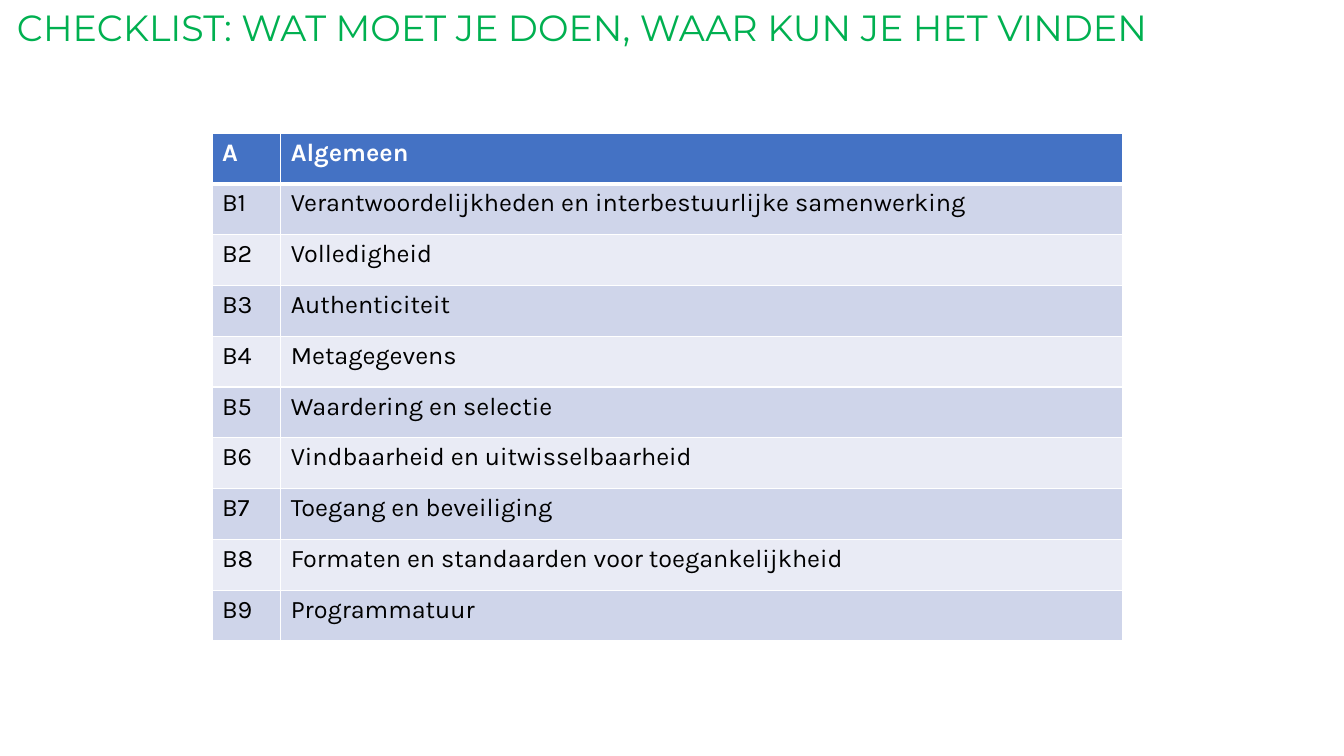
from typing import Any, NamedTuple

from lxml import etree
from pptx import Presentation
from pptx import util as u
from pptx.dml.color import RGBColor
from pptx.enum import text
from pptx.oxml import ns

GREEN = RGBColor(0x00, 0xB0, 0x50)
BLUE = RGBColor(0x44, 0x72, 0xC4)
BAND_DARK = RGBColor(0xCF, 0xD5, 0xEA)
BAND_LIGHT = RGBColor(0xE9, 0xEB, 0xF5)
WHITE = RGBColor(0xFF, 0xFF, 0xFF)
BLACK = RGBColor(0x00, 0x00, 0x00)

TITLE = "CHECKLIST: WAT MOET JE DOEN, WAAR KUN JE HET VINDEN"
ROW_HEIGHT = 36.3
COLUMN_WIDTHS = (49.1, 601.5)

TITLE_FORMAT = {"name": "Montserrat", "size": u.Pt(26)}
CELL_FORMAT = {"name": "Karla", "size": u.Pt(18)}


class ChecklistRow(NamedTuple):
    code: str
    subject: str


HEADER = ChecklistRow("A", "Algemeen")
SUBJECTS = (
    "Verantwoordelijkheden en interbestuurlijke samenwerking",
    "Volledigheid",
    "Authenticiteit",
    "Metagegevens",
    "Waardering en selectie",
    "Vindbaarheid en uitwisselbaarheid",
    "Toegang en beveiliging",
    "Formaten en standaarden voor toegankelijkheid",
    "Programmatuur",
)
ROWS = [HEADER] + [
    ChecklistRow(f"B{number}", subject)
    for number, subject in enumerate(SUBJECTS, start=1)
]


def write_text(paragraph: Any, content: str, color: RGBColor, values: dict) -> None:
    run = paragraph.add_run()
    run.text = content
    for name, value in values.items():
        setattr(run.font, name, value)
    run.font.color.rgb = color


def add_borders(cell: Any, widths: dict[str, int]) -> None:
    properties = cell._tc.get_or_add_tcPr()
    for side, width in widths.items():
        line = etree.SubElement(properties, ns.qn(f"a:ln{side}"), w=str(u.Pt(width)))
        fill = etree.SubElement(line, ns.qn("a:solidFill"))
        etree.SubElement(fill, ns.qn("a:srgbClr"), val=str(WHITE))


def add_title(slide: Any) -> None:
    box = slide.shapes.add_textbox(u.Pt(5), u.Pt(0), u.Pt(932.4), u.Pt(43.2))
    frame = box.text_frame
    frame.word_wrap = True
    frame.vertical_anchor = text.MSO_ANCHOR.MIDDLE
    paragraph = frame.paragraphs[0]
    paragraph.line_spacing = 0.9
    write_text(paragraph, TITLE, GREEN, TITLE_FORMAT)


def fill_row(table: Any, index: int, row: ChecklistRow) -> None:
    is_header = index == 0
    band = BAND_DARK if index % 2 else BAND_LIGHT
    borders = {
        "L": 1,
        "R": 1,
        "T": 3 if index == 1 else 1,
        "B": 3 if is_header else 1,
    }
    for column, content in enumerate(row):
        cell = table.cell(index, column)
        add_borders(cell, borders)
        cell.fill.solid()
        cell.fill.fore_color.rgb = BLUE if is_header else band
        write_text(
            cell.text_frame.paragraphs[0],
            content,
            WHITE if is_header else BLACK,
            {**CELL_FORMAT, "bold": is_header},
        )


def add_checklist(slide: Any) -> None:
    frame = slide.shapes.add_table(
        len(ROWS),
        len(COLUMN_WIDTHS),
        u.Pt(151.4),
        u.Pt(95),
        u.Pt(sum(COLUMN_WIDTHS)),
        u.Pt(ROW_HEIGHT * len(ROWS)),
    )
    table = frame.table
    for column, width in zip(table.columns, COLUMN_WIDTHS):
        column.width = u.Pt(width)
    for index, row in enumerate(ROWS):
        table.rows[index].height = u.Pt(ROW_HEIGHT)
        fill_row(table, index, row)


def main() -> None:
    presentation = Presentation()
    presentation.slide_width = u.Pt(960)
    presentation.slide_height = u.Pt(540)
    slide = presentation.slides.add_slide(presentation.slide_layouts[6])
    add_checklist(slide)
    add_title(slide)
    presentation.save("out.pptx")


if __name__ == "__main__":
    main()
